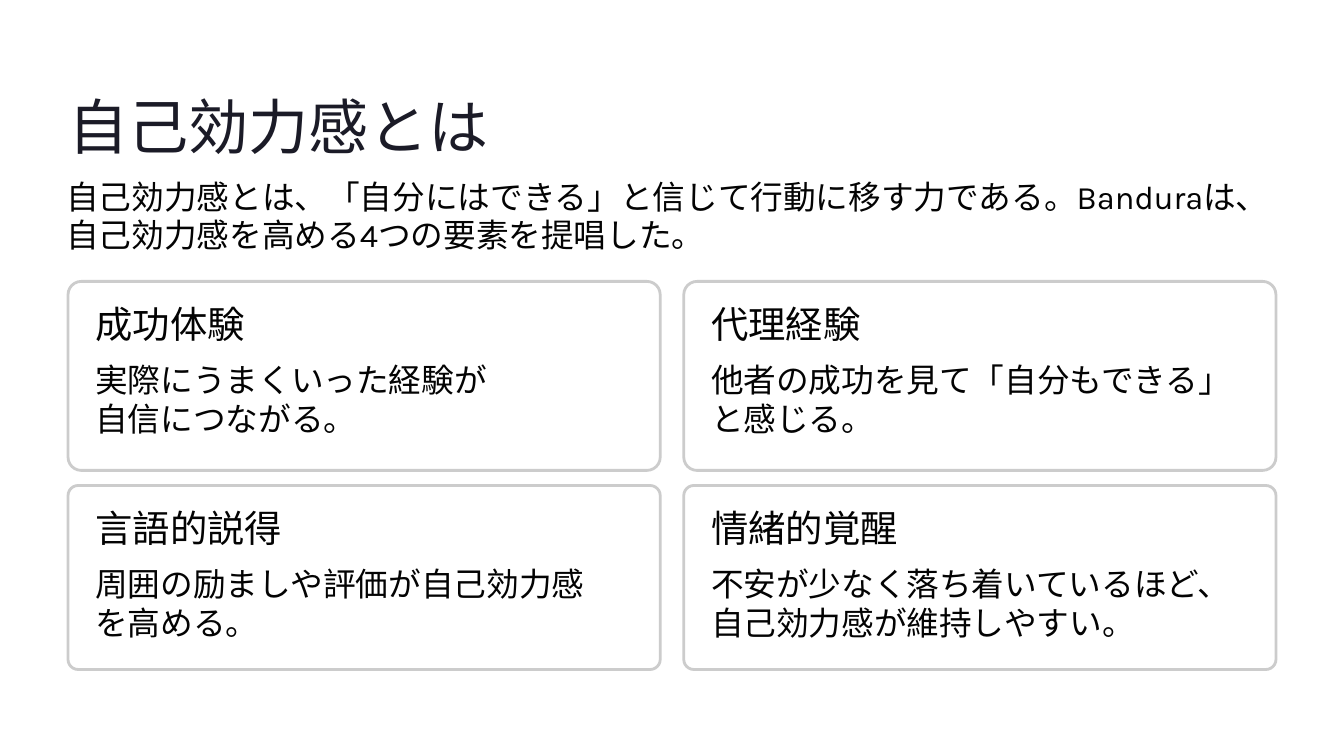
from pptx import Presentation
from pptx.dml.color import RGBColor
from pptx.enum.shapes import MSO_SHAPE
from pptx.oxml.ns import qn
from pptx.util import Inches, Pt
from lxml import etree

ROUNDED = MSO_SHAPE.ROUNDED_RECTANGLE
COLORS = {"title": "1B1B27", "text": "030303", "card": "FFFFFF", "border": "CCCCCC"}
HEADING_FONT, BODY_FONT = "Inter", "Karla"

CARD_WIDTH = 7.05
COLUMNS = [0.81, 8.14]
ROWS = [
    {"top": 3.35, "height": 2.25, "radius": 0.07},
    {"top": 5.78, "height": 2.19, "radius": 0.055},
]
CARDS = [
    ("成功体験", ["実際にうまくいった経験が", "自信につながる。"]),
    ("代理経験", ["他者の成功を見て「自分もできる」", "と感じる。"]),
    ("言語的説得", ["周囲の励ましや評価が自己効力感", "を高める。"]),
    ("情緒的覚醒", ["不安が少なく落ち着いているほど、自己効力感が維持しやすい。"]),
]


def color(name):
    return RGBColor.from_string(COLORS[name])


def add_text(page, lines, left, top, width, height, *, size, spacing,
             font=BODY_FONT, ink="text"):
    box = page.shapes.add_textbox(Inches(left), Inches(top), Inches(width), Inches(height))
    frame = box.text_frame
    frame.word_wrap = True
    frame.margin_left = frame.margin_right = frame.margin_top = frame.margin_bottom = 0
    for index, line in enumerate(lines):
        para = frame.paragraphs[0] if index == 0 else frame.add_paragraph()
        para.line_spacing = Pt(spacing)
        span = para.add_run()
        span.text = line
        span.font.size = Pt(size)
        span.font.name = font
        span.font.color.rgb = color(ink)
        # Use the same typeface for Japanese characters
        etree.SubElement(span.font._element, qn("a:ea"), typeface=font)


def add_card(page, heading, lines, left, top, height, radius):
    card = page.shapes.add_shape(ROUNDED, Inches(left), Inches(top),
                                 Inches(CARD_WIDTH), Inches(height))
    card.shadow.inherit = False
    card.adjustments[0] = radius
    card.fill.solid()
    card.fill.fore_color.rgb = color("card")
    card.line.color.rgb = color("border")
    card.line.width = Pt(2.4)
    text_left = left + 0.325
    add_text(page, [heading], text_left, top + 0.32, 3.61, 0.59,
             size=32, spacing=32, font=HEADING_FONT)
    add_text(page, lines, text_left, top + 0.945, 6.4, 0.92, size=28, spacing=33)


def main():
    deck = Presentation()
    deck.slide_width, deck.slide_height = Inches(16), Inches(9)
    page = deck.slides.add_slide(deck.slide_layouts[6])

    # Title and introduction
    add_text(page, ["自己効力感とは"], 0.81, 1.03, 7.21, 0.9,
             size=51.5, spacing=64.5, font=HEADING_FONT, ink="title")
    add_text(page, ["自己効力感とは、「自分にはできる」と信じて行動に移す力である。"
                    "Banduraは、自己効力感を高める4つの要素を提唱した。"],
             0.79, 2.11, 14.38, 0.92, size=28, spacing=33)

    # Two by two grid of cards
    for index, (heading, lines) in enumerate(CARDS):
        row, column = divmod(index, len(COLUMNS))
        add_card(page, heading, lines, COLUMNS[column], **ROWS[row])

    deck.save("out.pptx")


if __name__ == "__main__":
    main()
